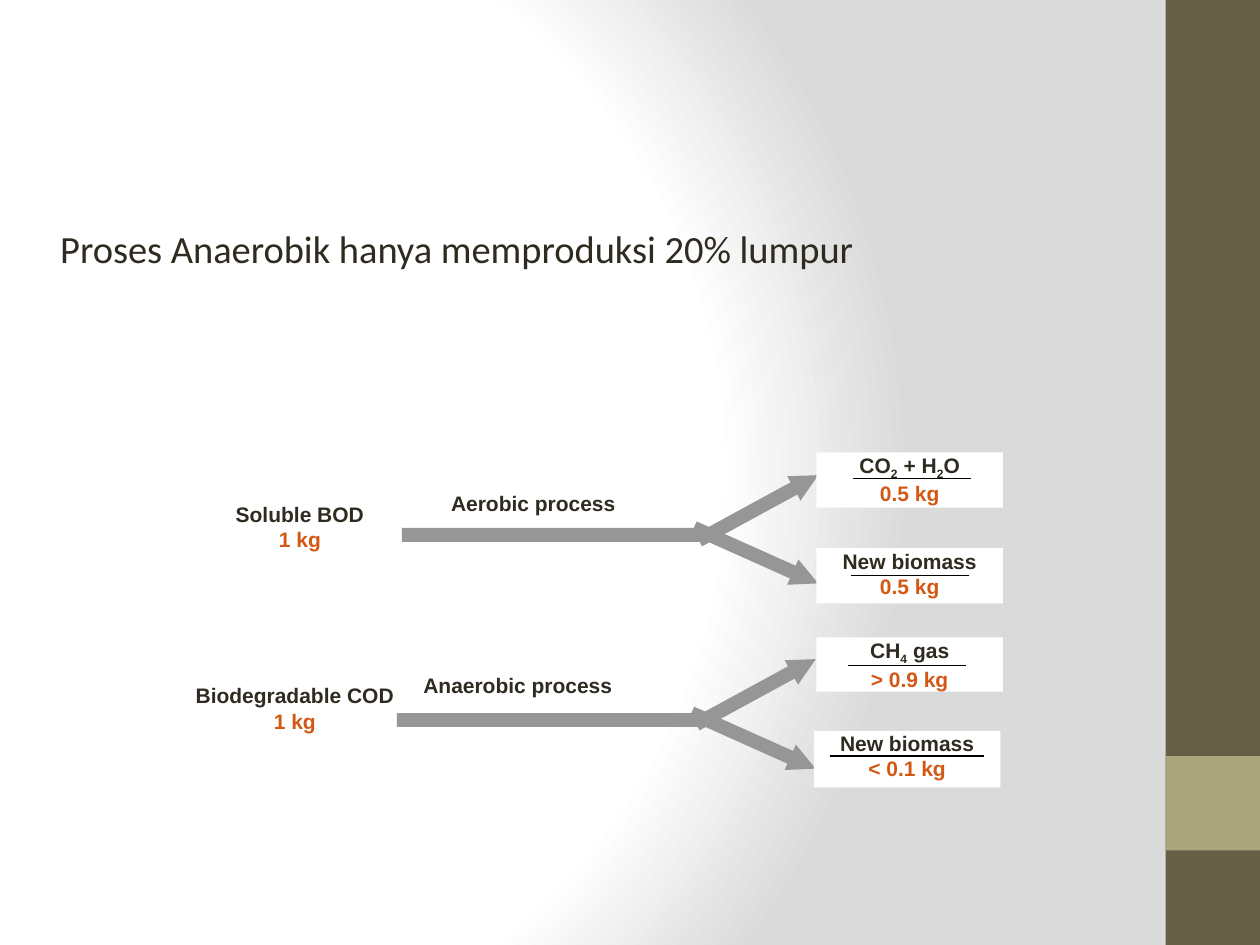
from pptx import Presentation
from pptx.util import Inches, Pt
from pptx.dml.color import RGBColor
from pptx.enum.shapes import MSO_SHAPE as Kind, MSO_CONNECTOR as Link
from pptx.enum.text import PP_ALIGN as Align, MSO_ANCHOR as Anchor
from pptx.oxml import parse_xml
from pptx.oxml.ns import nsdecls, qn

INK, RUST, GREY, WHITE = "2F2B20", "D25814", "969696", "FFFFFF"


def tint(code):
    return RGBColor.from_string(code)


class Deck:
    """Holds the style and the current slide, and draws each kind of element."""

    def __init__(self, wide, high):
        self.show = Presentation()
        self.show.slide_width, self.show.slide_height = Inches(wide), Inches(high)
        self.slide = self.show.slides.add_slide(self.show.slide_layouts[6])
        self.shapes = self.slide.shapes
        self.face, self.size = "Arial", 12

    def glow(self, stops, edge):
        self.slide.background.fill.solid()
        base = self.slide.element.find(".//" + qn("p:bgPr"))
        marks = "".join(
            f'<a:gs pos="{pos * 1000}"><a:srgbClr val="{code}"/></a:gs>'
            for pos, code in stops)
        sides = " ".join(f'{side}="{part * 1000}"' for side, part in zip("ltrb", edge))
        base.replace(base[0], parse_xml(
            f'<a:gradFill {nsdecls("a")} rotWithShape="1"><a:gsLst>{marks}</a:gsLst>'
            f'<a:path path="circle"><a:fillToRect {sides}/></a:path></a:gradFill>'))

    def block(self, x, y, w, h, fill, kind=Kind.RECTANGLE):
        shape = self.shapes.add_shape(kind, Inches(x), Inches(y), Inches(w), Inches(h))
        shape.shadow.inherit = False
        shape.fill.solid()
        shape.fill.fore_color.rgb = tint(fill)
        shape.line.fill.background()
        return shape

    def arrow(self, x, y, turn):
        shape = self.block(x, y, 1.08, 0.22, GREY, Kind.RIGHT_ARROW)
        shape.adjustments[0], shape.adjustments[1] = 0.5, 1
        shape.rotation = turn

    def style(self, run, code, face, size, bold):
        font = run.font
        font.name, font.size, font.bold = face, Pt(size), bold
        font.color.rgb = tint(code)

    def label(self, x, y, w, h, name, mass=None):
        frame = self.block(x, y, w, h, WHITE).text_frame
        frame.word_wrap, frame.vertical_anchor = True, Anchor.TOP
        frame.margin_left = frame.margin_right = 0
        frame.margin_top = frame.margin_bottom = 0
        para = frame.paragraphs[0]
        para.alignment = Align.CENTER if mass else Align.LEFT
        for i, part in enumerate(name.split("_")):
            run = para.add_run()
            run.text = part
            self.style(run, INK, self.face, self.size, True)
            if i % 2:
                run.font._element.set("baseline", "-25000")
        if mass:
            para = frame.add_paragraph()
            para.text, para.alignment = mass, Align.CENTER
            self.style(para.runs[0], RUST, self.face, self.size, True)

    def title(self, x, y, w, h, text):
        frame = self.shapes.add_textbox(Inches(x), Inches(y), Inches(w), Inches(h)).text_frame
        frame.word_wrap = True
        frame.text = text
        self.style(frame.paragraphs[0].runs[0], INK, "Calibri", 22, False)

    def rule(self, x, y, w):
        line = self.shapes.add_connector(
            Link.STRAIGHT, Inches(x), Inches(y), Inches(x + w), Inches(y))
        line.line.color.rgb, line.line.width = tint("000000"), Pt(0.75)
        line._element.spPr.append(parse_xml(f'<a:effectLst {nsdecls("a")}/>'))

    def fork(self, x, y, up, down):
        self.block(x, y, 2.42, 0.11, GREY)
        self.arrow(*up, 331.4)
        self.arrow(*down, 24.1)

    def yields(self, x, y, h, name, mass, rule):
        self.label(x, y, 1.48, h, name, mass)
        self.rule(*rule)


def main():
    deck = Deck(10, 7.5)
    deck.glow([(0, WHITE), (75, WHITE), (100, "DADADA")], (20, 50, 100, 50))
    deck.block(9.25, 0, 0.75, 7.5, "675E47")
    deck.block(9.25, 6, 0.75, 0.75, "A9A57C")
    deck.title(0.38, 1.74, 9, 4.95, "Proses Anaerobik hanya memproduksi 20% lumpur")

    deck.label(1.57, 3.98, 1.62, 0.44, "Soluble BOD", "1 kg")
    deck.fork(3.19, 4.19, (5.48, 3.92), (5.46, 4.3))
    deck.label(3.58, 3.89, 1.91, 0.25, "Aerobic process")
    deck.yields(6.48, 3.59, 0.44, "CO_2_ + H_2_O", "0.5 kg", (6.77, 3.8, 0.94))
    deck.yields(6.48, 4.35, 0.44, "New biomass", "0.5 kg", (6.75, 4.57, 0.94))

    deck.label(1.53, 5.42, 1.62, 0.68, "Biodegradable COD", "1 kg")
    deck.fork(3.15, 5.66, (5.46, 5.38), (5.44, 5.77))
    deck.label(3.36, 5.34, 2.08, 0.28, "Anaerobic process")
    deck.yields(6.48, 5.06, 0.43, "CH_4_ gas", "> 0.9 kg", (6.73, 5.28, 0.94))
    deck.yields(6.46, 5.8, 0.45, "New biomass", "< 0.1 kg", (6.59, 6, 1.22))
    deck.show.save("out.pptx")


if __name__ == "__main__":
    main()
